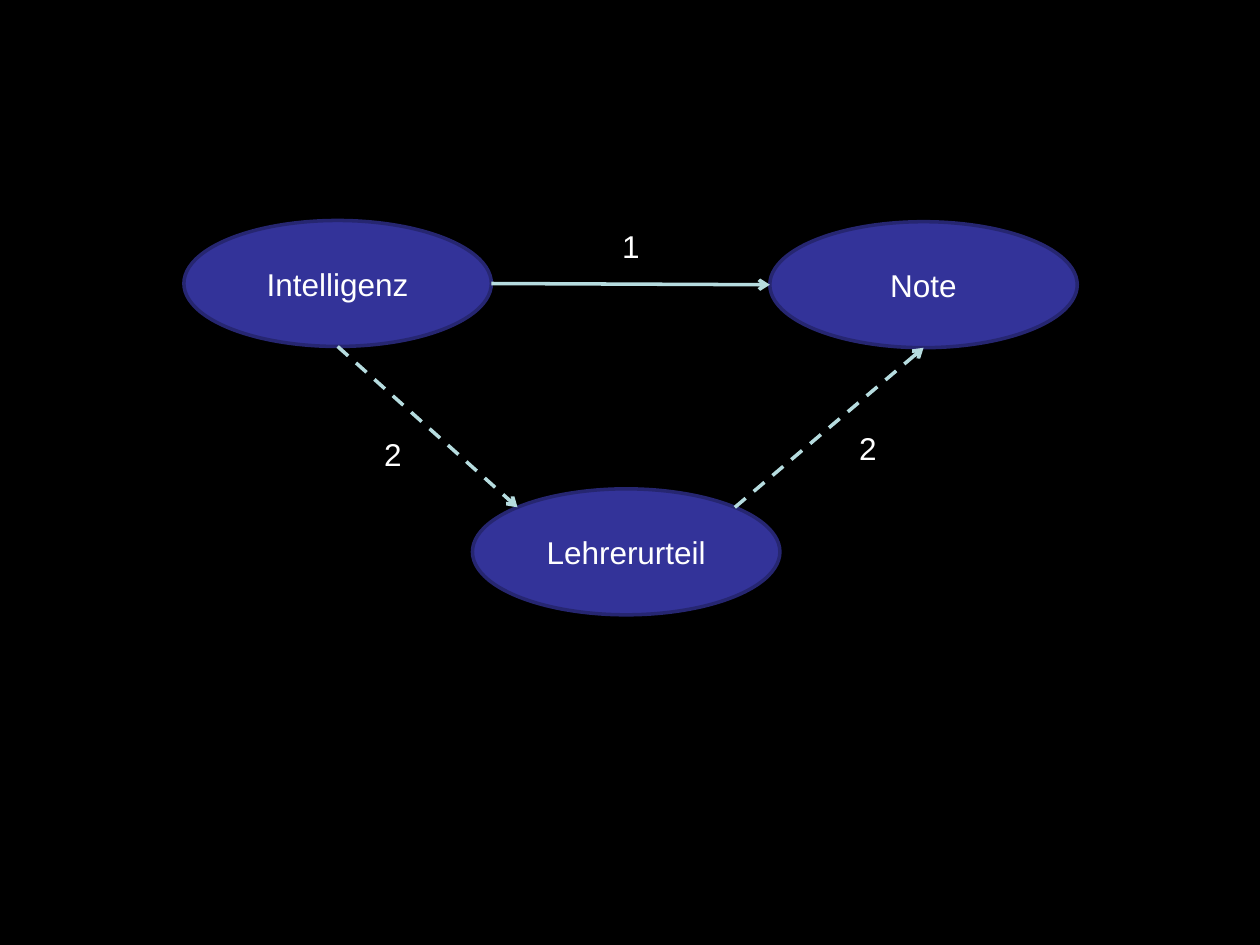
import math

import pptx
import pptx.dml.color
import pptx.enum.dml
import pptx.enum.shapes
import pptx.enum.text
import pptx.oxml
import pptx.oxml.ns
import pptx.util
from pptx.util import Inches

BLACK = pptx.dml.color.RGBColor(0x00, 0x00, 0x00)
WHITE = pptx.dml.color.RGBColor(0xFF, 0xFF, 0xFF)
INDIGO = pptx.dml.color.RGBColor(0x33, 0x33, 0x99)
DARK_INDIGO = pptx.dml.color.RGBColor(0x26, 0x26, 0x71)
PALE_TEAL = pptx.dml.color.RGBColor(0xB6, 0xDC, 0xDF)

FONT = {"name": "Arial", "size": pptx.util.Pt(18)}
LINE_WIDTH = pptx.util.Pt(2)
DASH = pptx.enum.dml.MSO_LINE.DASH
NODE_WIDTH, NODE_HEIGHT = 2.44, 1
LABEL_WIDTH, LABEL_HEIGHT = 0.34, 0.4
DIAGONAL = math.sqrt(0.5)

# Offsets from the diagram's top left corner
NODES = {
    "Intelligenz": (0, 0),
    "Lehrerurteil": (2.29, 2.13),
    "Note": (4.65, 0.01),
}
# Start node and direction, end node and direction, dash style
ARROWS = [
    ("Intelligenz", (1, 0), "Note", (-1, 0), None),
    ("Intelligenz", (0, 1), "Lehrerurteil", (-DIAGONAL, -DIAGONAL), DASH),
    ("Lehrerurteil", (DIAGONAL, -DIAGONAL), "Note", (0, 1), DASH),
]
LABELS = [("1", 3.38, 0), ("2", 1.49, 1.65), ("2", 5.26, 1.61)]


def write_text(frame, text):
    paragraph = frame.paragraphs[0]
    run = paragraph.add_run()
    run.text = text
    for name, value in FONT.items():
        setattr(run.font, name, value)
    run.font.color.rgb = WHITE
    return paragraph


def add_node(slide, text, left, top):
    shape = slide.shapes.add_shape(
        pptx.enum.shapes.MSO_SHAPE.OVAL,
        Inches(left), Inches(top), Inches(NODE_WIDTH), Inches(NODE_HEIGHT))
    shape.shadow.inherit = False
    shape.fill.solid()
    shape.fill.fore_color.rgb = INDIGO
    shape.line.color.rgb = DARK_INDIGO
    shape.line.width = LINE_WIDTH
    shape.text_frame.vertical_anchor = pptx.enum.text.MSO_ANCHOR.MIDDLE
    paragraph = write_text(shape.text_frame, text)
    paragraph.alignment = pptx.enum.text.PP_ALIGN.CENTER


def node_edge(left, top, node, direction):
    """Return the point on a node's outline that lies in a unit direction."""
    node_left, node_top = NODES[node]
    across, down = direction
    return (Inches(left + node_left + NODE_WIDTH / 2 * (1 + across)),
            Inches(top + node_top + NODE_HEIGHT / 2 * (1 + down)))


def add_arrow(slide, start, end, dash):
    connector = slide.shapes.add_connector(
        pptx.enum.shapes.MSO_CONNECTOR.STRAIGHT, *start, *end)
    connector.line.color.rgb = PALE_TEAL
    connector.line.width = LINE_WIDTH
    if dash is not None:
        connector.line.dash_style = dash
    outline = connector.line._get_or_add_ln()
    arrowhead = pptx.oxml.parse_xml(
        f'<a:tailEnd {pptx.oxml.ns.nsdecls("a")} type="arrow"/>')
    outline.append(arrowhead)
    connector._element.spPr.append(
        pptx.oxml.parse_xml(f'<a:effectLst {pptx.oxml.ns.nsdecls("a")}/>'))


def add_label(slide, text, left, top):
    box = slide.shapes.add_textbox(
        Inches(left), Inches(top), Inches(LABEL_WIDTH), Inches(LABEL_HEIGHT))
    box.text_frame.word_wrap = False
    box.text_frame.auto_size = pptx.enum.text.MSO_AUTO_SIZE.SHAPE_TO_FIT_TEXT
    write_text(box.text_frame, text)


def add_path_diagram(slide, left, top):
    for text, (across, down) in NODES.items():
        add_node(slide, text, left + across, top + down)
    for start_node, start_side, end_node, end_side, dash in ARROWS:
        add_arrow(slide,
                  node_edge(left, top, start_node, start_side),
                  node_edge(left, top, end_node, end_side), dash)
    for text, across, down in LABELS:
        add_label(slide, text, left + across, top + down)


def main():
    presentation = pptx.Presentation()
    presentation.slide_width = Inches(10)
    presentation.slide_height = Inches(7.5)
    slide = presentation.slides.add_slide(presentation.slide_layouts[6])
    slide.background.fill.solid()
    slide.background.fill.fore_color.rgb = BLACK
    add_path_diagram(slide, 1.46, 1.75)
    presentation.save("out.pptx")


if __name__ == "__main__":
    main()
